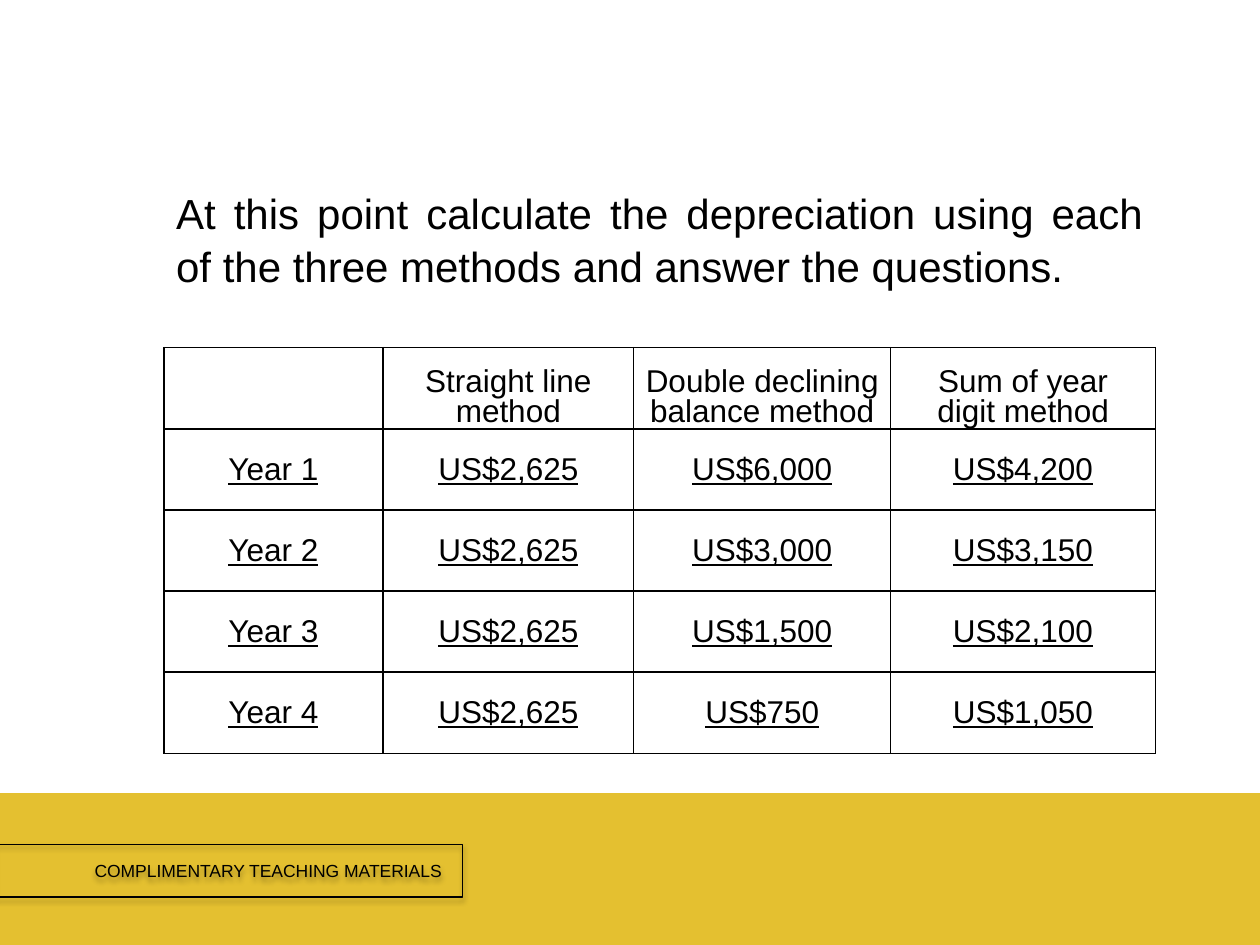
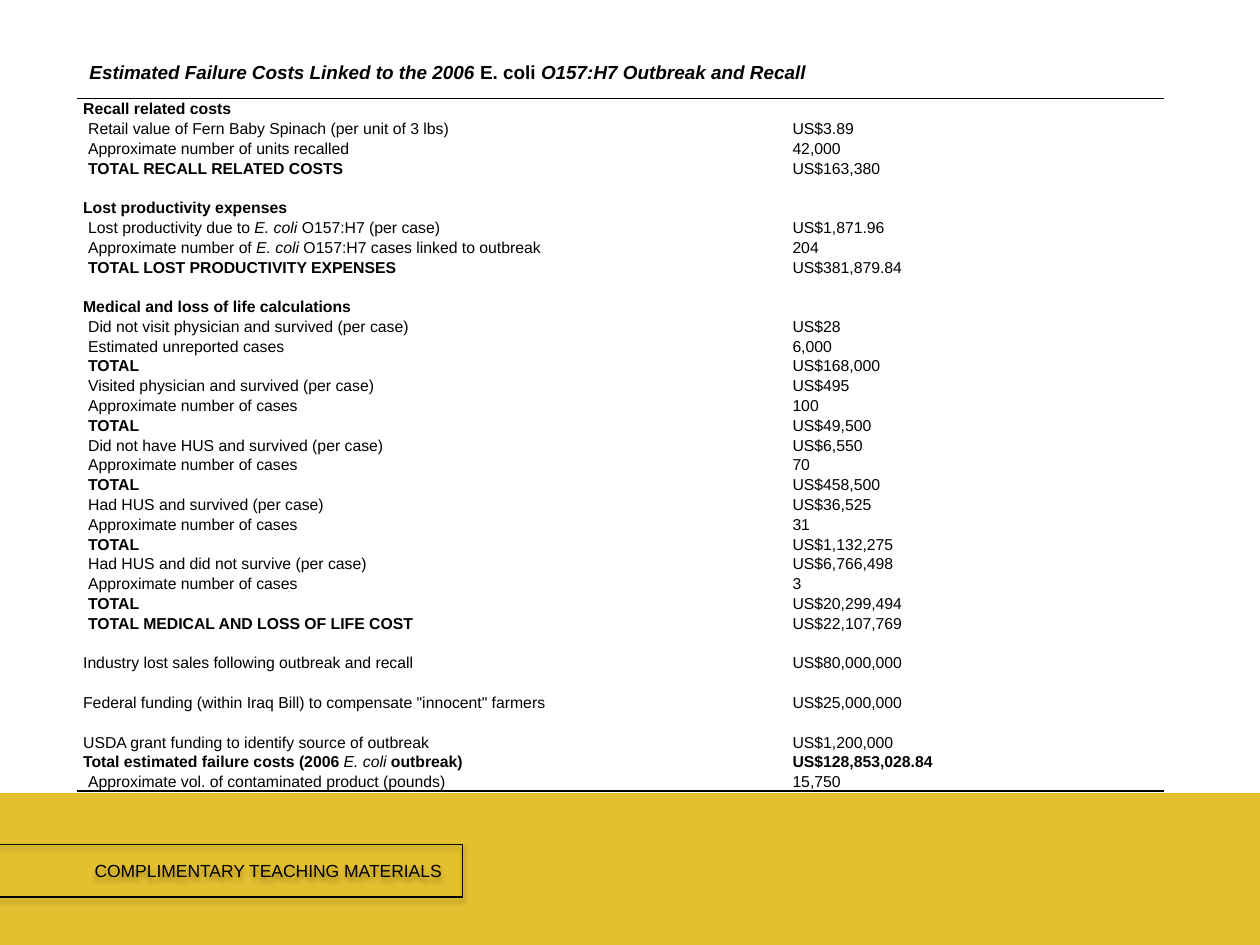
from dataclasses import dataclass

from lxml import etree
from pptx import Presentation
from pptx.dml.color import RGBColor
from pptx.enum.shapes import MSO_SHAPE
from pptx.enum.text import MSO_ANCHOR, PP_ALIGN
from pptx.oxml.ns import qn
from pptx.util import Emu, Inches, Pt

RECT = MSO_SHAPE.RECTANGLE
TOP, MIDDLE, BOTTOM = MSO_ANCHOR.TOP, MSO_ANCHOR.MIDDLE, MSO_ANCHOR.BOTTOM
LEFT, CENTER, JUSTIFY = PP_ALIGN.LEFT, PP_ALIGN.CENTER, PP_ALIGN.JUSTIFY
TITLE_ONLY, BLANK = 5, 6
WIDTH, HEIGHT = Inches(10), Inches(7.5)
NO_STYLE = "{2D5ABB26-0587-4C30-8999-92F81FD0307C}"
SPECIES = "E. coli"


@dataclass(frozen=True)
class Theme:
    font: str = "Arial"
    ink: RGBColor = RGBColor(0, 0, 0)
    gold: RGBColor = RGBColor(0xE4, 0xC0, 0x30)
    instruction: float = 24
    methods: float = 18
    title: float = 10.8
    footer: float = 10
    costs: float = 9


THEME = Theme()

METHOD_WIDTHS = (1.74, 1.99, 2.04, 2.1)
METHOD_HEADS = (
    (),
    ("Straight line", "method"),
    ("Double declining", "balance method"),
    ("Sum of year", "digit method"),
)
DEPRECIATION = (
    ("Year 1", "US$2,625", "US$6,000", "US$4,200"),
    ("Year 2", "US$2,625", "US$3,000", "US$3,150"),
    ("Year 3", "US$2,625", "US$1,500", "US$2,100"),
    ("Year 4", "US$2,625", "US$750", "US$1,050"),
)

# Row kinds of the cost table: (indented, bold label, bold value)
HEAD = (False, True, False)
ITEM = (True, False, False)
TOTAL = (True, True, False)
PLAIN = (False, False, False)
GRAND = (False, True, True)
GAP = (PLAIN, "", "")
COST_WIDTHS = (5.63, 3)
COSTS = (
    (HEAD, "Recall related costs", ""),
    (ITEM, "Retail value of Fern Baby Spinach (per unit of 3 lbs)", "US$3.89"),
    (ITEM, "Approximate number of units recalled", "42,000"),
    (TOTAL, "TOTAL RECALL RELATED COSTS", "US$163,380"),
    GAP,
    (HEAD, "Lost productivity expenses", ""),
    (ITEM, "Lost productivity due to E. coli O157:H7 (per case)", "US$1,871.96"),
    (ITEM, "Approximate number of E. coli O157:H7 cases linked to outbreak", "204"),
    (TOTAL, "TOTAL LOST PRODUCTIVITY EXPENSES", "US$381,879.84"),
    GAP,
    (HEAD, "Medical and loss of life calculations", ""),
    (ITEM, "Did not visit physician and survived (per case)", "US$28"),
    (ITEM, "Estimated unreported cases", "6,000"),
    (TOTAL, "TOTAL", "US$168,000"),
    (ITEM, "Visited physician and survived (per case)", "US$495"),
    (ITEM, "Approximate number of cases", "100"),
    (TOTAL, "TOTAL", "US$49,500"),
    (ITEM, "Did not have HUS and survived (per case)", "US$6,550"),
    (ITEM, "Approximate number of cases", "70"),
    (TOTAL, "TOTAL", "US$458,500"),
    (ITEM, "Had HUS and survived (per case)", "US$36,525"),
    (ITEM, "Approximate number of cases", "31"),
    (TOTAL, "TOTAL", "US$1,132,275"),
    (ITEM, "Had HUS and did not survive (per case)", "US$6,766,498"),
    (ITEM, "Approximate number of cases", "3"),
    (TOTAL, "TOTAL", "US$20,299,494"),
    (TOTAL, "TOTAL MEDICAL AND LOSS OF LIFE COST", "US$22,107,769"),
    GAP,
    (PLAIN, "Industry lost sales following outbreak and recall", "US$80,000,000"),
    GAP,
    (PLAIN, 'Federal funding (within Iraq Bill) to compensate "innocent" farmers',
     "US$25,000,000"),
    GAP,
    (PLAIN, "USDA grant funding to identify source of outbreak", "US$1,200,000"),
    (GRAND, "Total estimated failure costs (2006 E. coli outbreak)", "US$128,853,028.84"),
    (ITEM, "Approximate vol. of contaminated product (pounds)", "15,750"),
)


def area(left, top, width, height):
    """Percent shares of the slide as left, top, width, height."""
    sides = (WIDTH, HEIGHT, WIDTH, HEIGHT)
    return [Emu(round(side * share / 100))
            for side, share in zip(sides, (left, top, width, height))]


def add_run(paragraph, text, size, bold=False, italic=False, underline=False):
    run = paragraph.add_run()
    run.text = text
    font = run.font
    font.name, font.size, font.color.rgb = THEME.font, Pt(size), THEME.ink
    font.bold, font.italic, font.underline = bold, italic, underline


def add_species_runs(paragraph, text, size, bold, italic=False, species_bold=False):
    """Set the species name in the opposite slant to its surroundings."""
    for part in text.partition(SPECIES):
        if part:
            named = part == SPECIES
            add_run(paragraph, part, size, species_bold if named else bold,
                    named != italic)


# Shared footer
def add_footer(slide):
    band = slide.shapes.add_shape(RECT, *area(0, 84.13, 100, 15.87))
    band.shadow.inherit = False
    band.fill.solid()
    band.fill.fore_color.rgb = band.line.color.rgb = THEME.gold
    band.line.width = Pt(2)

    label = slide.shapes.add_shape(RECT, *area(-0.4, 89.33, 37.1, 5.6))
    label.fill.background()
    label.line.color.rgb = THEME.ink
    label.line.width = Pt(0.75)
    add_soft_shadow(label)
    frame = label.text_frame
    frame.word_wrap = True
    frame.vertical_anchor = MIDDLE
    frame.margin_left = Inches(0.79)
    frame.paragraphs[0].alignment = LEFT
    add_run(frame.paragraphs[0], "COMPLIMENTARY TEACHING MATERIALS", THEME.footer)


def add_soft_shadow(shape):
    shape.shadow.inherit = False
    effects = shape._element.spPr.find(qn("a:effectLst"))
    shadow = etree.SubElement(effects, qn("a:outerShdw"), blurRad=str(Pt(3.1)),
                              dist=str(Pt(1.8)), dir="5400000", rotWithShape="0")
    color = etree.SubElement(shadow, qn("a:srgbClr"), val=str(THEME.ink))
    etree.SubElement(color, qn("a:alpha"), val="35000")


# Tables
def add_plain_table(slide, row_count, widths, place):
    table = slide.shapes.add_table(row_count, len(widths), *place).table
    table.first_row = table.horz_banding = False
    table._tbl.tblPr.find(qn("a:tableStyleId")).text = NO_STYLE
    for column, width in zip(table.columns, widths):
        column.width = Inches(width)
    for row in table.rows:
        row.height = Emu(place[3] // row_count)
    return table


def prepare_cell(cell, anchor, margin, size):
    cell.fill.background()
    cell.vertical_anchor = anchor
    cell.margin_left = cell.margin_right = Inches(margin)
    cell.margin_top = cell.margin_bottom = 0
    end = cell.text_frame.paragraphs[0]._p.get_or_add_endParaRPr()
    end.set("sz", str(round(size * 100)))


def add_borders(cell, sides):
    """Draw the cell's sides, named in the order L, R, T, B."""
    properties = cell._tc.get_or_add_tcPr()
    for position, side in enumerate(sides):
        line = etree.Element(qn(f"a:ln{side}"), w=str(Pt(1)))
        fill = etree.SubElement(line, qn("a:solidFill"))
        etree.SubElement(fill, qn("a:srgbClr"), val=str(THEME.ink))
        properties.insert(position, line)


def fill_method_head(cell, lines):
    frame = cell.text_frame
    for index, line in enumerate(lines):
        paragraph = frame.paragraphs[0] if index == 0 else frame.add_paragraph()
        paragraph.alignment = CENTER
        paragraph.line_spacing = Pt(11)
        if index:
            paragraph.space_before = Pt(6)
        add_run(paragraph, line, THEME.methods)


def add_depreciation_table(slide):
    table = add_plain_table(slide, len(DEPRECIATION) + 1, METHOD_WIDTHS,
                            area(13, 36.8, 78.7, 42.93))
    for row_index, row in enumerate((METHOD_HEADS, *DEPRECIATION)):
        for column_index, content in enumerate(row):
            cell = table.cell(row_index, column_index)
            is_head = row_index == 0
            prepare_cell(cell, BOTTOM if is_head else MIDDLE, 0.07, THEME.methods)
            add_borders(cell, "LRTB")
            if is_head:
                fill_method_head(cell, content)
            else:
                paragraph = cell.text_frame.paragraphs[0]
                paragraph.alignment = CENTER
                add_run(paragraph, content, THEME.methods, underline=True)


def add_cost_table(slide):
    table = add_plain_table(slide, len(COSTS), COST_WIDTHS,
                            area(6.1, 10.4, 86.3, 73.33))
    edges = {0: "T", len(COSTS) - 1: "B"}
    for row_index, ((indented, *weights), *texts) in enumerate(COSTS):
        for column_index, (text, bold) in enumerate(zip(texts, weights)):
            cell = table.cell(row_index, column_index)
            prepare_cell(cell, BOTTOM, 0.05, THEME.costs)
            add_borders(cell, edges.get(row_index, ""))
            if indented and column_index == 0:
                cell.margin_left = Inches(0.09)
            add_species_runs(cell.text_frame.paragraphs[0], text, THEME.costs, bold)


# Text blocks
def add_instruction(slide, text):
    frame = slide.shapes.add_textbox(*area(13, 18.93, 78.7, 13)).text_frame
    frame.word_wrap = True
    frame.vertical_anchor = TOP
    paragraph = frame.paragraphs[0]
    paragraph.alignment = JUSTIFY
    paragraph.line_spacing = 1.05
    add_run(paragraph, text, THEME.instruction)


def set_title(slide, text):
    title = slide.shapes.title
    title.left, title.top, title.width, title.height = area(6.1, 5.6, 72.6, 4)
    frame = title.text_frame
    frame.vertical_anchor = MIDDLE
    frame.paragraphs[0].alignment = LEFT
    add_species_runs(frame.paragraphs[0], text, THEME.title, bold=True,
                     italic=True, species_bold=True)


def main():
    deck = Presentation()
    deck.slide_width, deck.slide_height = WIDTH, HEIGHT

    # Depreciation by method
    depreciation = deck.slides.add_slide(deck.slide_layouts[BLANK])
    add_footer(depreciation)
    add_instruction(depreciation, "At this point calculate the depreciation using "
                    "each of the three methods and answer the questions.")
    add_depreciation_table(depreciation)

    # Failure costs of the outbreak
    failure_costs = deck.slides.add_slide(deck.slide_layouts[TITLE_ONLY])
    add_footer(failure_costs)
    set_title(failure_costs, "Estimated Failure Costs Linked to the 2006 E. coli "
              "O157:H7 Outbreak and Recall")
    add_cost_table(failure_costs)

    deck.save("out.pptx")


if __name__ == "__main__":
    main()
